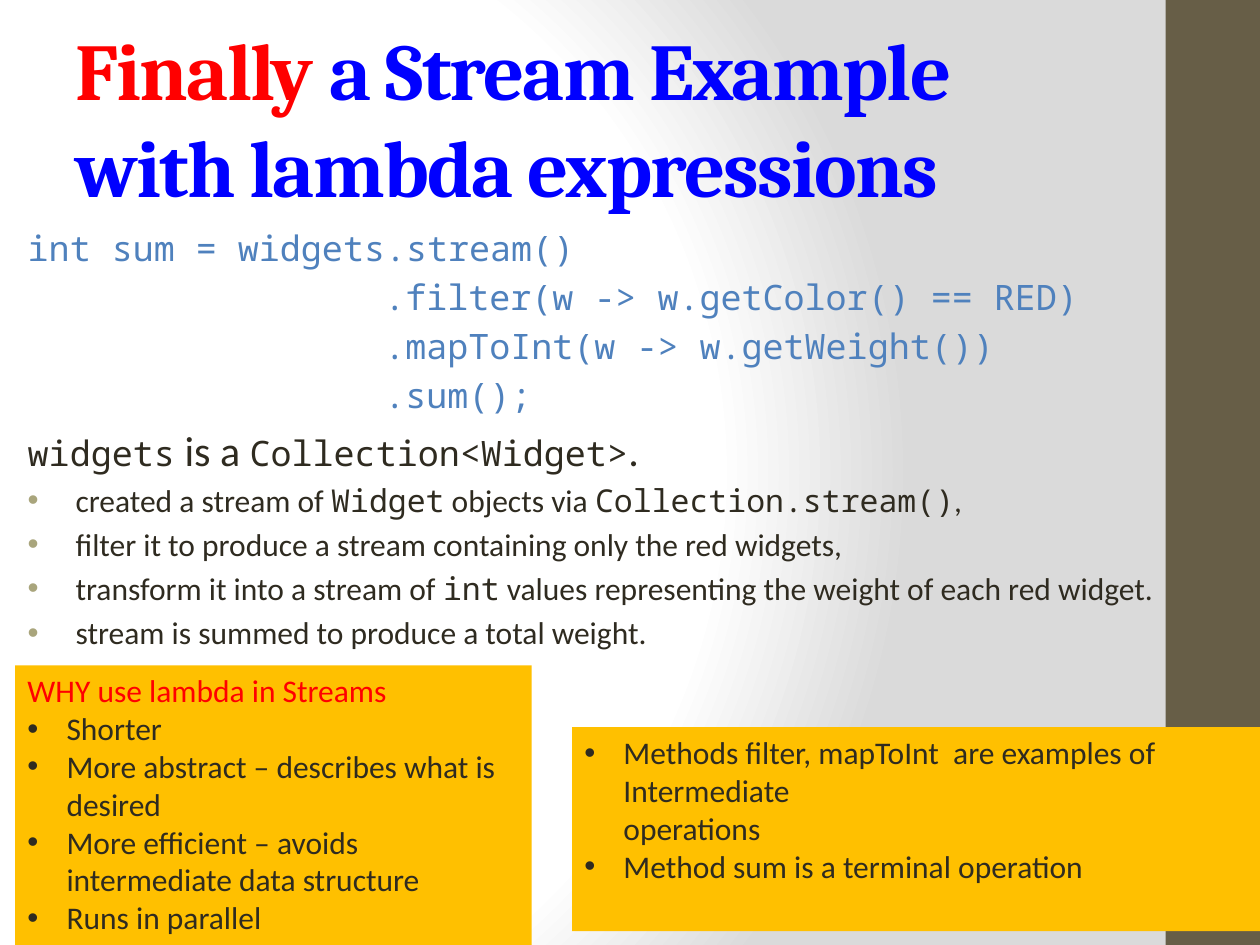
"""Build a slide explaining a Java stream example with lambda expressions."""
from lxml import etree
from pptx import Presentation
from pptx.dml.color import RGBColor
from pptx.enum.shapes import MSO_SHAPE
from pptx.enum.text import MSO_ANCHOR, MSO_AUTO_SIZE, PP_ALIGN
from pptx.oxml import parse_xml
from pptx.oxml.ns import nsdecls, qn
from pptx.util import Inches, Pt

RED = RGBColor(0xFF, 0x00, 0x00)
BLUE = RGBColor(0x00, 0x00, 0xFF)
CODE_BLUE = RGBColor(0x4F, 0x81, 0xBD)
INK = RGBColor(0x2F, 0x2B, 0x20)
SAND = RGBColor(0xA9, 0xA5, 0x7C)
BROWN = RGBColor(0x67, 0x5E, 0x47)
AMBER = RGBColor(0xFF, 0xC0, 0x00)
SANS, MONO, SERIF = "Calibri", "Noto Sans Mono", "Cambria"

TITLE = [("Finally ", RED), ("a Stream Example with lambda expressions", BLUE)]
CODE = [
    ("int sum = widgets.stream()", 0),
    (".filter(w -> w.getColor() == RED)", 2.83),
    (".mapToInt(w -> w.getWeight())", 2.83),
    (".sum();", 2.83),
]
SUBJECT = [("widgets", MONO, 20), (" is a ", SANS, 24),
           ("Collection<Widget>", MONO, 20), (".", SANS, 24)]
STEPS = [
    [("created a stream of ", SANS), ("Widget", MONO), (" objects via ", SANS),
     ("Collection.stream()", MONO), (",", SANS)],
    [("filter it to produce a stream containing only the red widgets,", SANS)],
    [("transform it into a stream of ", SANS), ("int", MONO),
     (" values representing the weight of each red widget.", SANS)],
    [("stream is summed to produce a total weight.", SANS)],
]
NOTES = [
    ((4.54, 5.77, 5.46, 1.62), None,
     ["Methods filter, mapToInt  are examples of Intermediate\voperations",
      "Method sum is a terminal operation"]),
    ((0.12, 5.28, 4.1, 2.22), "WHY use lambda in Streams",
     ["Shorter", "More abstract – describes what is desired",
      "More efficient – avoids intermediate data structure", "Runs in parallel"]),
]
BACKDROP = f"""<a:gradFill {nsdecls('a')} rotWithShape="1"><a:gsLst>
<a:gs pos="0"><a:srgbClr val="FFFFFF"/></a:gs>
<a:gs pos="75000"><a:srgbClr val="FFFFFF"/></a:gs>
<a:gs pos="100000"><a:srgbClr val="DADADA"/></a:gs></a:gsLst>
<a:path path="circle"><a:fillToRect l="20000" t="50000" r="100000" b="50000"/></a:path>
</a:gradFill>"""


def place(part, left, top, width, height):
    part.left, part.top = Inches(left), Inches(top)
    part.width, part.height = Inches(width), Inches(height)


def style(run, face, size, color):
    run.font.name, run.font.size = face, Pt(size)
    run.font.color.rgb = color


def write(paragraph, pieces):
    for text, face, size, color in pieces:
        run = paragraph.add_run()
        run.text = text
        style(run, face, size, color)


def indent(paragraph, margin, hanging=0, bullet_color=None):
    props = paragraph._p.get_or_add_pPr()
    props.set("marL", str(Inches(margin)))
    props.set("indent", str(-Inches(hanging)))
    if not hanging:
        etree.SubElement(props, qn("a:buNone"))
        return
    if bullet_color is not None:
        tint = etree.SubElement(props, qn("a:buClr"))
        etree.SubElement(tint, qn("a:srgbClr"), val=str(bullet_color))
    etree.SubElement(props, qn("a:buFont"), typeface="Arial")
    etree.SubElement(props, qn("a:buChar"), char="•")


def add_block(slide, box, color):
    block = slide.shapes.add_shape(MSO_SHAPE.RECTANGLE, *map(Inches, box))
    block.shadow.inherit = False
    block.fill.solid()
    block.fill.fore_color.rgb = color
    block.line.fill.background()
    return block


def add_title(slide):
    title = slide.shapes.title
    place(title, 0.5, 0.3, 8.33, 1.25)
    frame = title.text_frame
    frame.auto_size, frame.vertical_anchor = MSO_AUTO_SIZE.NONE, MSO_ANCHOR.MIDDLE
    heading = frame.paragraphs[0]
    heading.alignment = PP_ALIGN.LEFT
    write(heading, [(text, SERIF, 46, color) for text, color in TITLE])
    for run in heading.runs:
        run.font.bold = True
        run._r.get_or_add_rPr().set("spc", "-100")


def add_body(slide):
    body = slide.placeholders[1]
    place(body, 0.12, 1.75, 9.47, 4.46)
    frame = body.text_frame
    frame.auto_size = MSO_AUTO_SIZE.NONE
    rows = [([(text, MONO, 20, CODE_BLUE)], margin, 0) for text, margin in CODE]
    rows.append(([(*piece, INK) for piece in SUBJECT], 0, 0))
    rows += [([(*piece, 18, INK) for piece in step], 0.38, 0.38) for step in STEPS]
    for index, (pieces, margin, hanging) in enumerate(rows):
        paragraph = frame.add_paragraph() if index else frame.paragraphs[0]
        indent(paragraph, margin, hanging, SAND)
        write(paragraph, pieces)


def add_note(slide, box, heading, points):
    frame = add_block(slide, box, AMBER).text_frame
    frame.word_wrap, frame.vertical_anchor = True, MSO_ANCHOR.TOP
    frame.text = "\n".join(([heading] if heading else []) + points)
    for index, paragraph in enumerate(frame.paragraphs):
        is_heading = bool(heading) and index == 0
        paragraph.alignment = PP_ALIGN.LEFT
        if not is_heading:
            indent(paragraph, 0.31, 0.31, INK)
        for run in paragraph.runs:
            style(run, SANS, 18, RED if is_heading else INK)


def main():
    deck = Presentation()
    deck.slide_width, deck.slide_height = Inches(10), Inches(7.5)
    slide = deck.slides.add_slide(deck.slide_layouts[1])
    slide.background.fill.solid()
    flat = slide._element.find(".//" + qn("p:bgPr")).find(qn("a:solidFill"))
    flat.getparent().replace(flat, parse_xml(BACKDROP))
    add_block(slide, (9.25, 0, 0.75, 7.5), BROWN)
    add_title(slide)
    add_body(slide)
    for note in NOTES:
        add_note(slide, *note)
    deck.save("out.pptx")


if __name__ == "__main__":
    main()
